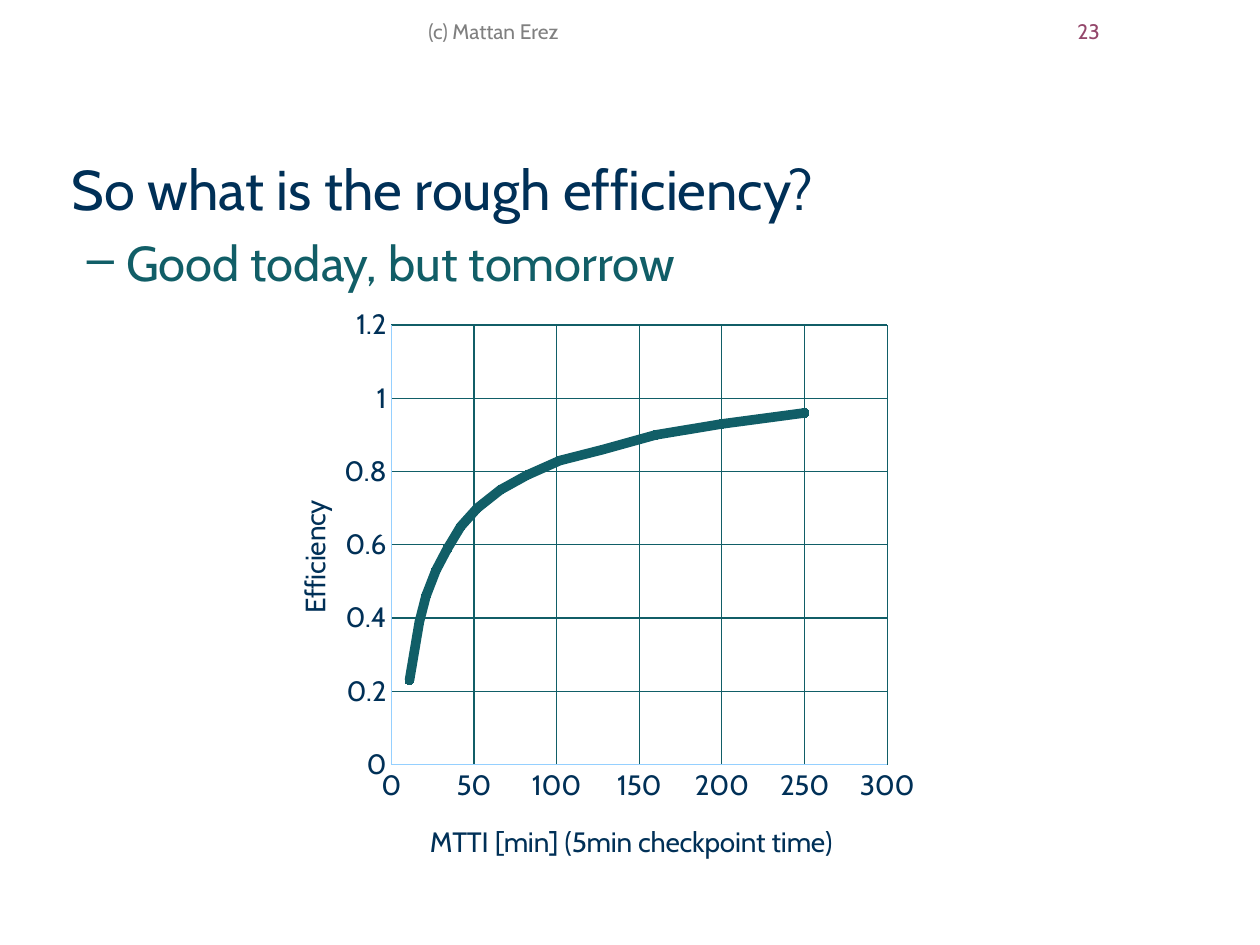
from dataclasses import dataclass
from typing import Any

from lxml import etree
from pptx import Presentation
from pptx.chart import data
from pptx.dml.color import RGBColor
from pptx.enum import chart as ch, text
from pptx.oxml import ns
from pptx.util import Pt

NAVY, TEAL, SKY, PLUM, GREY = "003057", "115E67", "95D0FF", "94476B", "808080"

EFFICIENCY_BY_MTTI = [
    (250, 0.96), (200, 0.93), (160, 0.9), (128, 0.86), (102, 0.83),
    (82, 0.79), (66, 0.75), (52, 0.7), (42, 0.65), (34, 0.59),
    (27, 0.53), (21, 0.46), (17, 0.39), (14, 0.31), (11, 0.23),
]


def color(code):
    return RGBColor.from_string(code)


def place(parent, index, **fractions):
    """Give a plot area or axis title a fixed place, in fractions of the chart."""
    for old in parent.findall(ns.qn("c:layout")):
        parent.remove(old)
    layout = etree.Element(ns.qn("c:layout"))
    manual = etree.SubElement(layout, ns.qn("c:manualLayout"))
    settings = {"xMode": "edge", "yMode": "edge", **fractions}
    if "w" in fractions:
        settings = {"layoutTarget": "inner", **settings}
    for tag, value in settings.items():
        etree.SubElement(manual, ns.qn(f"c:{tag}")).set("val", str(value))
    parent.insert(index, layout)


@dataclass
class SlideBuilder:
    slide: Any
    face: str = "Cabin"

    def style(self, font, size, code):
        font.name, font.size, font.bold = self.face, Pt(size), False
        font.color.rgb = color(code)

    def frame(self, left, top, width, height, anchor, margins):
        box = self.slide.shapes.add_textbox(Pt(left), Pt(top), Pt(width), Pt(height))
        frame = box.text_frame
        frame.word_wrap = True
        frame.vertical_anchor = anchor
        frame.margin_left = frame.margin_right = Pt(margins[0])
        frame.margin_top = frame.margin_bottom = Pt(margins[1])
        return frame

    def header(self, words, left, width, align, code):
        frame = self.frame(left, 0, width, 36, text.MSO_ANCHOR.MIDDLE, (7.2, 3.6))
        line = frame.paragraphs[0]
        line.text, line.alignment = words, align
        self.style(line.font, 12, code)

    def body(self, heading, point):
        frame = self.frame(36, 90, 672, 90, text.MSO_ANCHOR.TOP, (0, 0))
        title = frame.paragraphs[0]
        title.text = heading
        title._p.get_or_add_pPr().set("marL", str(Pt(5)))
        self.style(title.font, 32, NAVY)
        item = frame.add_paragraph()
        item.text = point
        props = item._p.get_or_add_pPr()
        props.set("marL", str(Pt(36)))
        props.set("indent", str(Pt(-22.3)))
        bullet_color = etree.SubElement(props, ns.qn("a:buClr"))
        etree.SubElement(bullet_color, ns.qn("a:srgbClr")).set("val", TEAL)
        etree.SubElement(props, ns.qn("a:buChar")).set("char", "–")
        item.space_before = Pt(6)
        self.style(item.font, 28, TEAL)
        title.line_spacing = item.line_spacing = 0.99

    def axis(self, axis, title, maximum, step, x, y, rotation):
        axis.minimum_scale, axis.maximum_scale, axis.major_unit = 0, maximum, step
        axis.major_tick_mark = axis.minor_tick_mark = ch.XL_TICK_MARK.NONE
        axis.has_major_gridlines = True
        for line, code in ((axis.format.line, SKY),
                           (axis.major_gridlines.format.line, TEAL)):
            line.width = Pt(0.75)
            line.color.rgb = color(code)
        axis.tick_labels.number_format = "General"
        axis.tick_labels.number_format_is_linked = False
        self.style(axis.tick_labels.font, 16, NAVY)
        frame = axis.axis_title.text_frame
        frame.text = title
        self.style(frame.paragraphs[0].font, 16, NAVY)
        body = frame._txBody.find(ns.qn("a:bodyPr"))
        body.set("rot", str(rotation * 60000))
        body.set("vert", "horz")
        place(axis.axis_title._element, 1, x=x, y=y)

    def curve(self, points, left, top, width, height):
        plot_data = data.XyChartData()
        series_data = plot_data.add_series("Series 1")
        for mtti, efficiency in points:
            series_data.add_data_point(mtti, efficiency)
        chart = self.slide.shapes.add_chart(
            ch.XL_CHART_TYPE.XY_SCATTER_LINES,
            Pt(left), Pt(top), Pt(width), Pt(height), plot_data).chart
        chart.has_legend = chart.has_title = False
        self.style(chart.font, 16, NAVY)
        chart.plots[0].vary_by_categories = False
        series = chart.plots[0].series[0]
        series.smooth = False
        series.format.line.width = Pt(5.5)
        series.format.line.color.rgb = color(TEAL)
        marker = series.marker
        marker.style, marker.size = ch.XL_MARKER_STYLE.CIRCLE, 5
        marker.format.fill.solid()
        marker.format.fill.fore_color.rgb = color(TEAL)
        marker.format.line.color.rgb = color(TEAL)
        self.axis(chart.category_axis, "MTTI [min] (5min checkpoint time)",
                  300, 50, 0.25, 0.89, 0)
        self.axis(chart.value_axis, "Efficiency", 1.2, 0.2, 0.05, 0.34, -90)
        plot_area = chart._chartSpace.find(".//" + ns.qn("c:plotArea"))
        place(plot_area, 0, x=0.2, y=0.05, w=0.74, h=0.75)


def main():
    deck = Presentation()
    deck.slide_width, deck.slide_height = Pt(720), Pt(540)
    builder = SlideBuilder(deck.slides.add_slide(deck.slide_layouts[6]))
    builder.body("So what is the rough efficiency?", "Good today, but tomorrow")
    builder.header("23", 570, 65.5, text.PP_ALIGN.RIGHT, PLUM)
    builder.header("(c) Mattan Erez", 66, 432, text.PP_ALIGN.CENTER, GREY)
    builder.curve(EFFICIENCY_BY_MTTI, 147, 169, 383, 335)
    deck.save("out.pptx")


if __name__ == "__main__":
    main()
